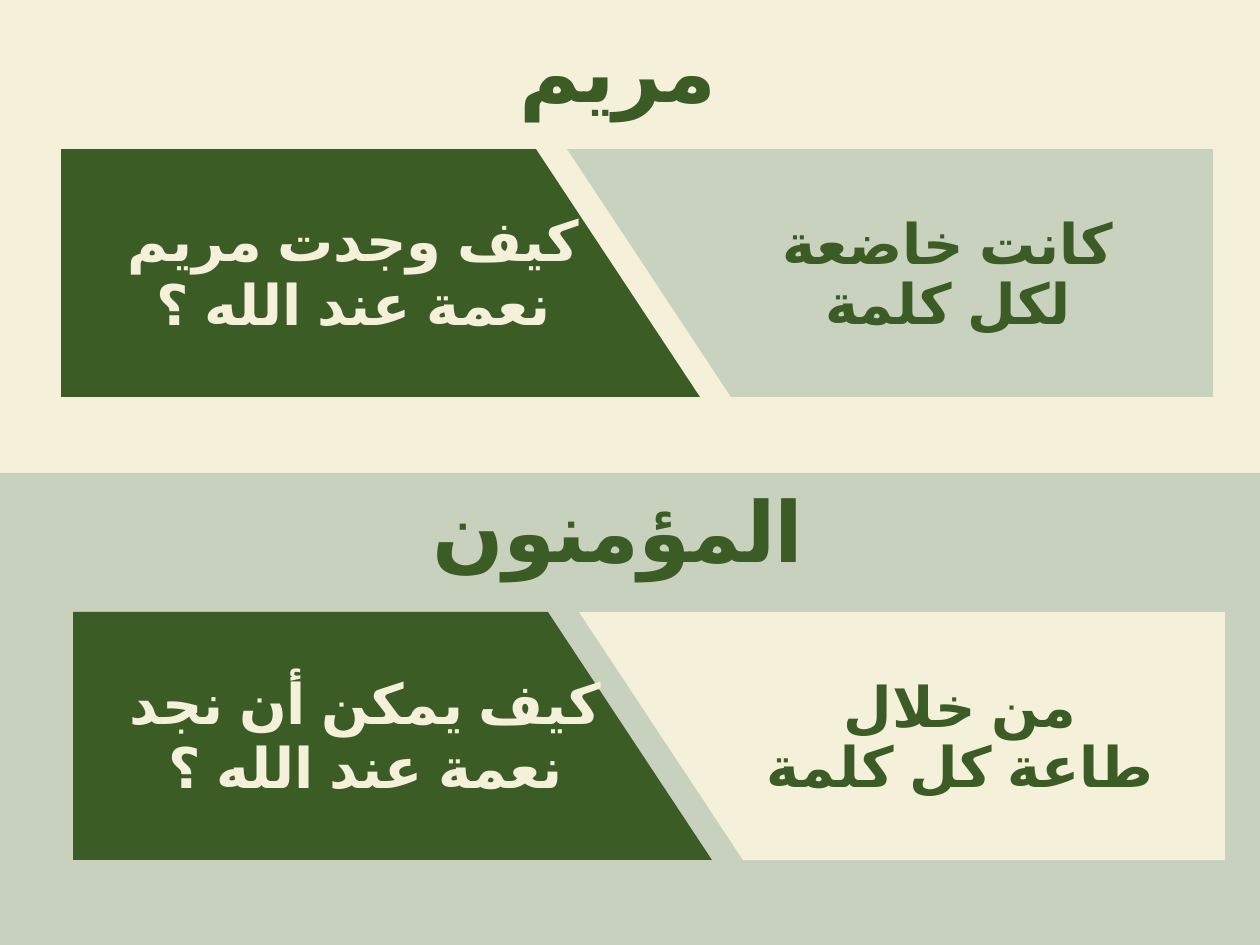
from lxml import etree
from pptx import Presentation
from pptx import util as u
from pptx.dml.color import RGBColor
from pptx.enum import lang, shapes, text
from pptx.oxml.ns import qn

SCALE = u.Inches(1) / 126
CREAM, GREEN, SAGE, TEAL = "F4F0D9", "3C5C26", "C9D2BE", "638C80"
FONT = "Arial"


def add_block(parent, kind, box, color, rotation=0):
    shape = parent.shapes.add_shape(kind, *(round(v * SCALE) for v in box))
    shape.shadow.inherit = False
    shape.fill.solid()
    shape.fill.fore_color.rgb = RGBColor.from_string(color)
    shape.line.fill.background()
    shape.rotation = rotation
    if kind == shapes.MSO_SHAPE.ISOSCELES_TRIANGLE:
        shape.adjustments[0] = 0
    return shape


def add_text(parent, lines, box, color, size=32, spacing=0.9, after=0, title=False):
    frame = parent.shapes.add_textbox(*(round(v * SCALE) for v in box)).text_frame
    frame.word_wrap = True
    if title:
        frame.margin_left = frame.margin_top = frame.margin_right = frame.margin_bottom = 0
        frame.auto_size = text.MSO_AUTO_SIZE.SHAPE_TO_FIT_TEXT
    else:
        frame.vertical_anchor = text.MSO_ANCHOR.BOTTOM
    for i, line in enumerate(lines):
        paragraph = frame.add_paragraph() if i else frame.paragraphs[0]
        paragraph.alignment = text.PP_ALIGN.CENTER
        paragraph.line_spacing = spacing
        paragraph.space_after = u.Pt(after)
        paragraph._p.get_or_add_pPr().set("rtl", "1")
        run = paragraph.add_run()
        run.text = line
        run.font.size = u.Pt(size)
        run.font.bold = True
        run.font.name = FONT
        run.font.language_id = lang.MSO_LANGUAGE_ID.ARABIC
        run.font.color.rgb = RGBColor.from_string(color)
        properties = run.font._element
        etree.SubElement(properties, qn("a:cs"), typeface=FONT)
        if title:
            properties.set("spc", "-80")


prs = Presentation()
prs.slide_width, prs.slide_height = u.Inches(10), u.Inches(7.5)
slide = prs.slides.add_slide(prs.slide_layouts[6])
slide.background.fill.solid()
slide.background.fill.fore_color.rgb = RGBColor.from_string(CREAM)

RECT = shapes.MSO_SHAPE.RECTANGLE
TRIANGLE = shapes.MSO_SHAPE.ISOSCELES_TRIANGLE

lower_half = add_block(slide, RECT, (0, 473, 1260, 472), TEAL)
teal = lower_half.fill._xPr.find(qn("a:solidFill"))[0]
etree.SubElement(teal, qn("a:alpha"), val="30000")

# title, title top, band left, band top, answer colour, question, answer
bands = [
    ("مريم", 30, 61, 149, SAGE,
     ["كيف وجدت مريم", "نعمة عند الله ؟"], ["كانت خاضعة", "لكل كلمة"]),
    ("المؤمنون", 490, 73, 612, CREAM,
     ["كيف يمكن أن نجد", "نعمة عند الله ؟"], ["من خلال", "طاعة كل كلمة"]),
]
HEIGHT, SLANT = 248, 164

for title, title_top, left, top, answer_color, question, answer in bands:
    add_text(slide, [title], (368, title_top, 500, 92), GREEN, size=48, title=True)

    question_group = slide.shapes.add_group_shape()
    add_block(question_group, TRIANGLE, (left + 475, top, SLANT, HEIGHT), GREEN)
    add_block(question_group, RECT, (left, top, 475, HEIGHT), GREEN)
    add_text(question_group, question, (left + 12, top + 53, 561, 141), CREAM,
             spacing=0.8, after=6)

    answer_group = slide.shapes.add_group_shape()
    add_block(answer_group, TRIANGLE, (left + 506, top, SLANT, HEIGHT), answer_color, 180)
    add_block(answer_group, RECT, (left + 670, top, 482, HEIGHT), answer_color, 180)
    add_text(slide, answer, (left + 627, top + 53, 520, 141), GREEN)

prs.save("out.pptx")
